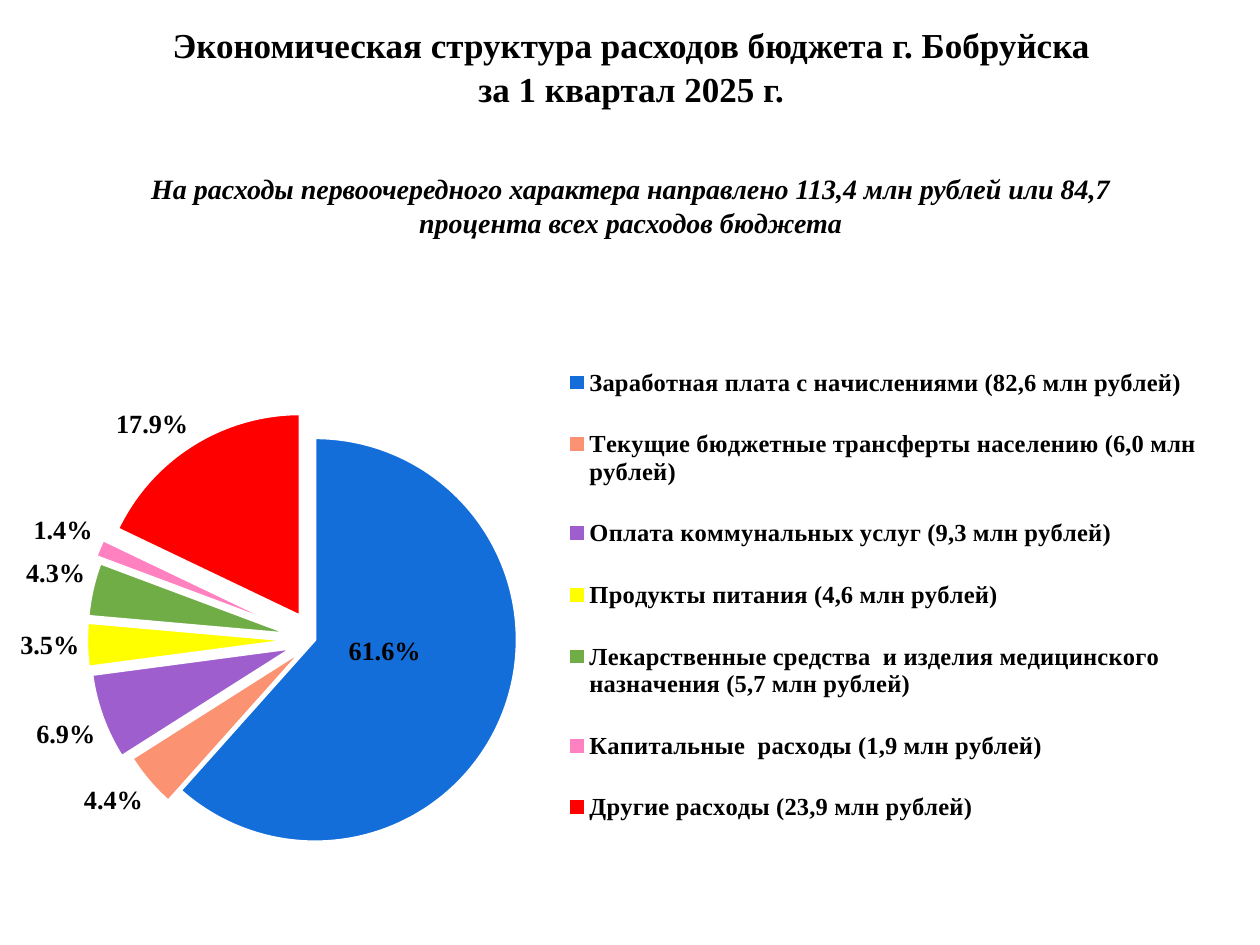
from lxml.etree import SubElement
from pptx import Presentation
from pptx.chart.data import CategoryChartData as Data
from pptx.dml.color import RGBColor
from pptx.enum.chart import XL_CHART_TYPE as Kind, XL_LABEL_POSITION as Spot
from pptx.enum.chart import XL_LEGEND_POSITION as Side
from pptx.enum.text import MSO_ANCHOR as Anchor, PP_ALIGN as Align
from pptx.oxml import parse_xml
from pptx.oxml.ns import nsdecls, qn
from pptx.util import Inches, Pt


def style(font, size, italic=False, color="000000"):
    font.name = "Times New Roman"
    font.size = Pt(size)
    font.bold = True
    font.italic = italic
    font.color.rgb = RGBColor.from_string(color)


def layout(**parts):
    node = parse_xml(f"<c:layout {nsdecls('c')}><c:manualLayout/></c:layout>")
    for tag, val in parts.items():
        SubElement(node[0], qn("c:" + tag)).set("val", str(val))
    return node


deck = Presentation()
deck.slide_width, deck.slide_height = Inches(10), Inches(7.5)
wide, high = deck.slide_width, deck.slide_height
slide = deck.slides.add_slide(deck.slide_layouts[5])

title = slide.shapes.title
title.left, title.top = int(wide * 0.002), int(high * 0.017)
title.width, title.height = int(wide * 0.998), int(high * 0.105)
frame = title.text_frame
frame.text = "Экономическая структура расходов бюджета г. Бобруйска\nза 1 квартал 2025 г."
frame.vertical_anchor = Anchor.MIDDLE
for para in frame.paragraphs:
    para.alignment = Align.CENTER
    para.line_spacing = 1.05
    style(para.runs[0].font, 20)

items = [
    ("Заработная плата с начислениями (82,6 млн рублей)", 0.616, "146EDA", 0),
    ("Текущие бюджетные трансферты населению (6,0 млн рублей)", 0.044, "FB9271", 8),
    ("Оплата коммунальных услуг (9,3 млн рублей)", 0.069, "9E5ECE", 12),
    ("Продукты питания (4,6 млн рублей)", 0.035, "FFFF00", 13),
    ("Лекарственные средства  и изделия медицинского назначения (5,7 млн рублей)",
     0.043, "70AD47", 13),
    ("Капитальные  расходы (1,9 млн рублей)", 0.014, "FF81C0", 16),
    ("Другие расходы (23,9 млн рублей)", 0.179, "FF0000", 14),
]
data = Data(number_format="0.0%")
data.categories = [item[0] for item in items]
data.add_series("Series 1", [item[1] for item in items])
chart = slide.shapes.add_chart(
    Kind.PIE, int(wide * -0.002), int(high * 0.139),
    int(wide * 0.983), int(high * 0.861), data).chart
chart.has_title = False
style(chart.font, 10)

chart.has_legend = True
legend = chart.legend
legend.position = Side.BOTTOM
legend.include_in_layout = False
style(legend.font, 14)
for old in legend._element.findall(qn("c:layout")):
    legend._element.remove(old)
legend._element.find(qn("c:legendPos")).addnext(
    layout(xMode="edge", yMode="edge", x=0.45, y=0.25, w=0.53, h=0.64))

area = chart._chartSpace.chart.plotArea
for old in area.findall(qn("c:layout")):
    area.remove(old)
area.insert(0, layout(layoutTarget="inner", xMode="edge", yMode="edge",
                      x=0.082, y=0.269, w=0.349, h=0.75))

plot = chart.plots[0]
plot.vary_by_categories = True
plot.has_data_labels = True
labels = plot.data_labels
labels.show_value = True
labels.show_percentage = False
labels.number_format = "0.0%"
labels.number_format_is_linked = False
labels.position = Spot.OUTSIDE_END
style(labels.font, 15)

pie = plot.series[0]
burst = parse_xml(f'<c:explosion {nsdecls("c")} val="7"/>')
pie.format.fill.solid()
pie._element.find(qn("c:spPr")).addnext(burst)
for num, (name, share, color, push) in enumerate(items):
    point = pie.points[num]
    fill = point.format.fill
    fill.solid()
    fill.fore_color.rgb = RGBColor.from_string(color)
    edge = point.format.line
    edge.width = Pt(1.5)
    edge.color.rgb = RGBColor.from_string("FFFFFF")
    spot = parse_xml(f'<c:explosion {nsdecls("c")} val="{push}"/>')
    pie._element.findall(qn("c:dPt"))[num].find(qn("c:spPr")).addprevious(spot)
    tag = point.data_label
    style(tag.font, 15)
    tag.position = Spot.OUTSIDE_END if num else Spot.CENTER

first = pie._element.find(qn("c:dLbls")).find(qn("c:dLbl"))
first.insert(1, layout(x=-0.02, y=-0.03))
every = pie.data_labels
every.show_value = True
every.show_percentage = False
every.number_format = "0.0%"
every.number_format_is_linked = False
style(every.font, 15)

note = slide.shapes.add_textbox(
    int(wide * 0.083), int(high * 0.175), int(wide * 0.835), int(high * 0.085))
note.text_frame.word_wrap = True
note.text_frame.text = ("На расходы первоочередного характера направлено 113,4 млн рублей "
                        "или 84,7 процента всех расходов бюджета")
para = note.text_frame.paragraphs[0]
para.alignment = Align.CENTER
style(para.runs[0].font, 16, italic=True)

deck.save("out.pptx")
